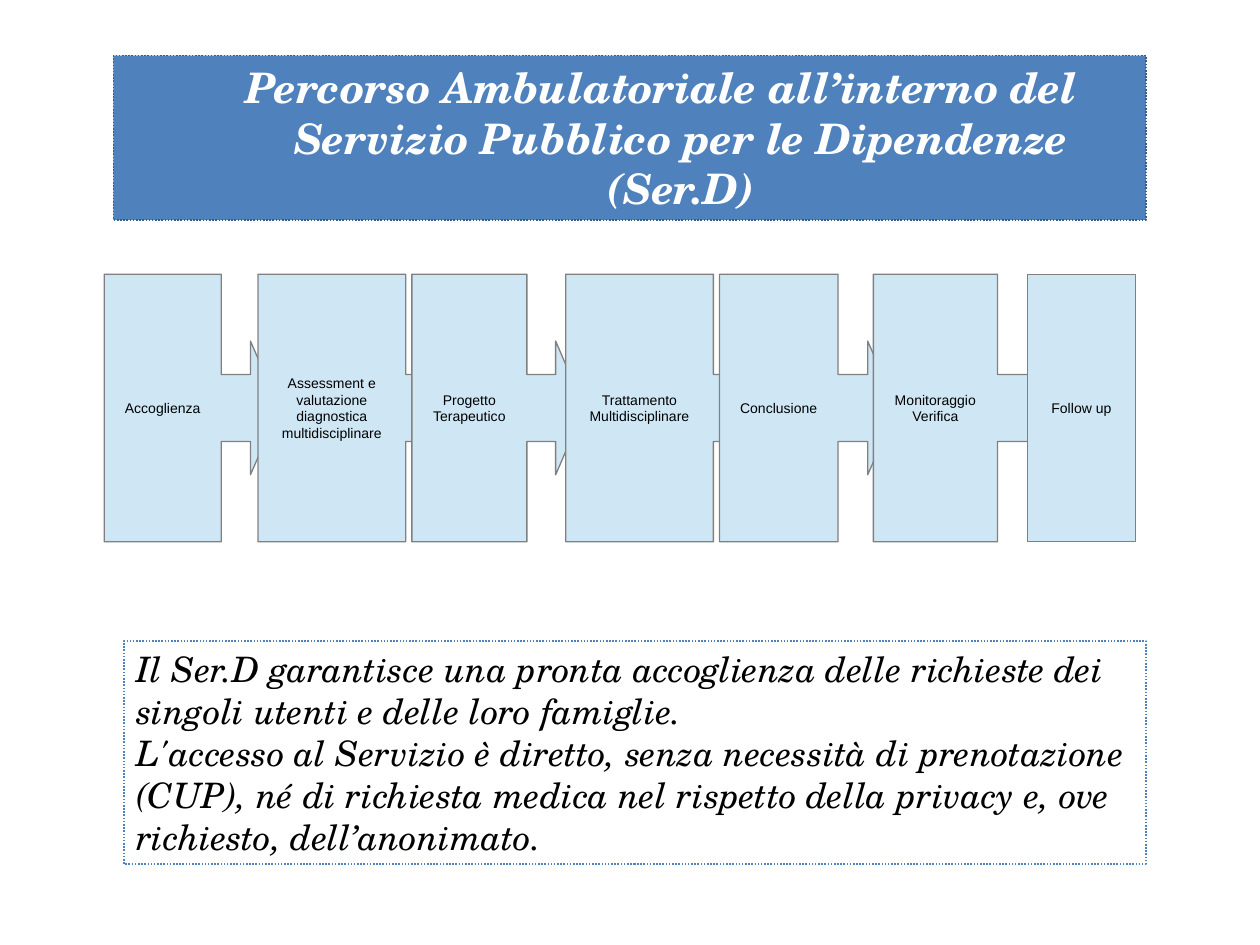
import pptx
import pptx.util
import pptx.dml.color
import pptx.enum.dml
import pptx.enum.shapes
import pptx.enum.text

Pt = pptx.util.Pt
SHAPE = pptx.enum.shapes.MSO_SHAPE
ALIGN = pptx.enum.text.PP_ALIGN
ANCHOR = pptx.enum.text.MSO_ANCHOR

TITLE = "Percorso Ambulatoriale all’interno del Servizio Pubblico per le Dipendenze (Ser.D)"
STEPS = [  # label lines, width
    (["Accoglienza"], 100.2),
    (["Assessment e", "valutazione", "diagnostica", "multidisciplinare"], 126.6),
    (["Progetto", "Terapeutico"], 98.6),
    (["Trattamento", "Multidisciplinare"], 126.6),
    (["Conclusione"], 101.6),
    (["Monitoraggio", "Verifica"], 106.4),
    (["Follow up"], 62),
]
NOTES = [
    "Il Ser.D garantisce una pronta accoglienza delle richieste dei singoli utenti "
    "e delle loro famiglie.",
    "L'accesso al Servizio è diretto, senza necessità di prenotazione (CUP), né di "
    "richiesta medica nel rispetto della privacy e, ove richiesto, dell’anonimato.",
]

STEP_LEFT, STEP_TOP, STEP_HEIGHT, STEP_PITCH = 59.6, 156.7, 152.9, 87.9
TITLE_FONT = {"name": "TeX Gyre Schola", "size": Pt(24), "bold": True, "italic": True}
NOTES_FONT = {"name": "TeX Gyre Schola", "size": Pt(20), "bold": False, "italic": True}
STEP_FONT = {"name": "Arial", "size": Pt(8), "bold": False, "italic": False}


def color(value):
    return pptx.dml.color.RGBColor.from_string(value)


def style_box(shape, fill, line, width, dash=None):
    shape.fill.solid()
    shape.fill.fore_color.rgb = color(fill)
    shape.line.color.rgb = color(line)
    shape.line.width = Pt(width)
    if dash:
        shape.line.dash_style = dash


def write(shape, lines, font, font_color, align, anchor, wrap=True):
    frame = shape.text_frame
    frame.text = "\n".join(lines)
    frame.word_wrap = wrap
    frame.vertical_anchor = anchor
    frame.auto_size = pptx.enum.text.MSO_AUTO_SIZE.NONE
    for paragraph in frame.paragraphs:
        paragraph.alignment = align
        for name, value in font.items():
            setattr(paragraph.font, name, value)
        paragraph.font.color.rgb = color(font_color)


presentation = pptx.Presentation()
presentation.slide_width, presentation.slide_height = Pt(720), Pt(540)
slide = presentation.slides.add_slide(presentation.slide_layouts[5])
dots = pptx.enum.dml.MSO_LINE.ROUND_DOT

title = slide.shapes.title
title.left, title.top, title.width, title.height = Pt(64.8), Pt(31.8), Pt(590), Pt(93.8)
style_box(title, "4F81BD", "385D8A", 0.91, dots)
write(title, [TITLE], TITLE_FONT, "FFFFFF", ALIGN.CENTER, ANCHOR.TOP)
properties = title.text_frame.paragraphs[0]._p.get_or_add_pPr()
properties.set("marL", str(Pt(58.5)))
properties.set("indent", str(Pt(-22.5)))

flow = slide.shapes.add_group_shape()
for index, (lines, width) in enumerate(STEPS):
    is_last = index == len(STEPS) - 1
    kind = SHAPE.FLOWCHART_PROCESS if is_last else SHAPE.RIGHT_ARROW_CALLOUT
    step = flow.shapes.add_shape(kind, Pt(STEP_LEFT + index * STEP_PITCH), Pt(STEP_TOP),
                                 Pt(width), Pt(STEP_HEIGHT))
    step.shadow.inherit = False
    if not is_last:
        shaft = STEP_HEIGHT / 4 / width  # arrow shaft is a quarter of the height
        for position, value in enumerate((shaft, shaft, 1 / 6, 2 / 3)):
            step.adjustments[position] = value
    style_box(step, "CFE7F5", "808080", 0.75)
    write(step, lines, STEP_FONT, "000000", ALIGN.CENTER, ANCHOR.MIDDLE, wrap=False)

notes = slide.shapes.add_shape(SHAPE.RECTANGLE, Pt(70.8), Pt(366.3), Pt(584), Pt(127.4))
notes.shadow.inherit = False
style_box(notes, "FFFFFF", "4F81BD", 0.91, dots)
write(notes, NOTES, NOTES_FONT, "000000", ALIGN.LEFT, ANCHOR.TOP)

presentation.save("out.pptx")
